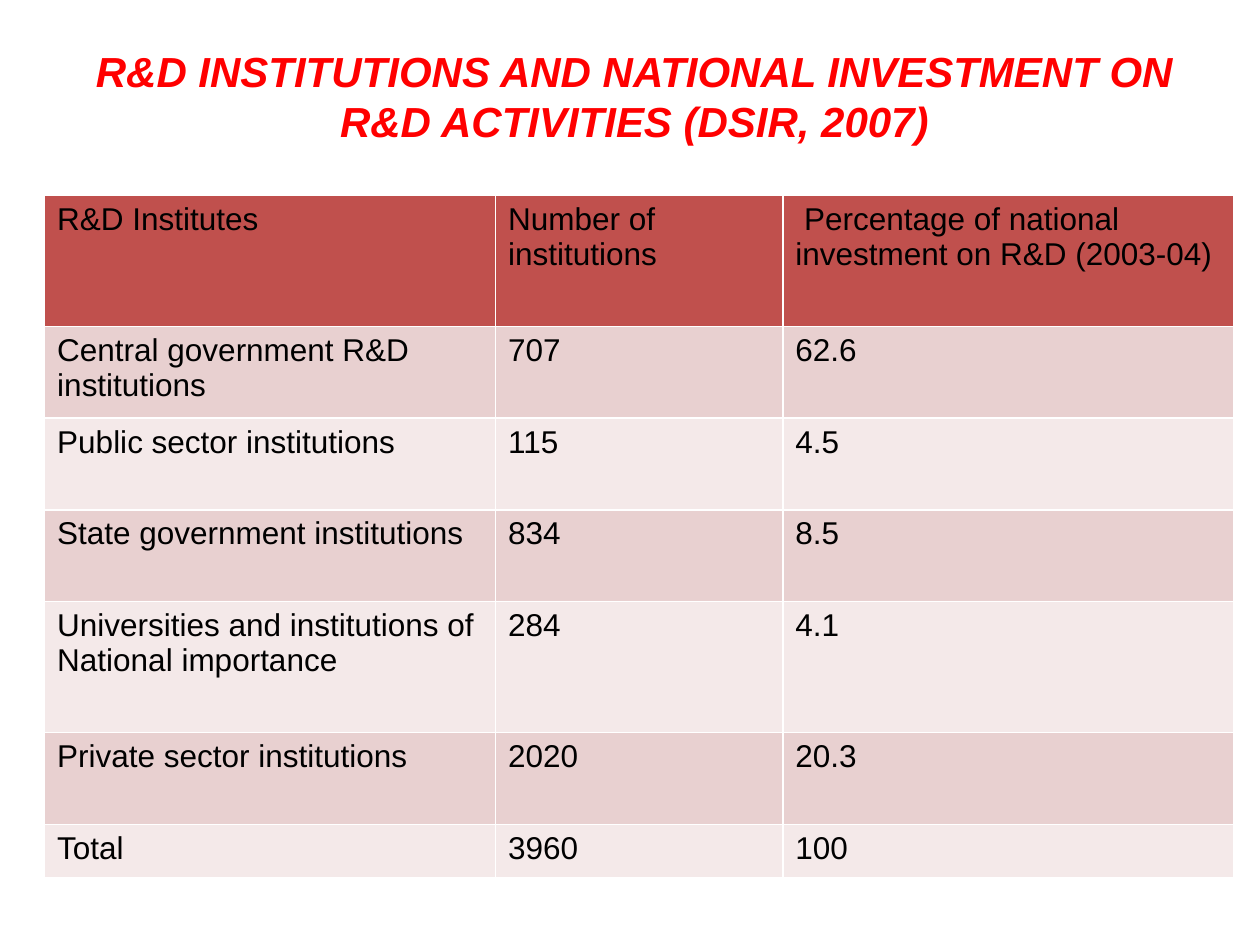
from pptx import Presentation
from pptx.dml.color import RGBColor
from pptx.enum.text import MSO_ANCHOR, PP_ALIGN
from pptx.util import Cm, Pt

TITLE = "R&D INSTITUTIONS AND NATIONAL INVESTMENT ON R&D ACTIVITIES (DSIR, 2007)"
ROWS = [
    ("R&D Institutes", "Number of institutions",
     " Percentage of national investment on R&D (2003-04)"),
    ("Central government R&D institutions", "707", "62.6"),
    ("Public sector institutions", "115", "4.5"),
    ("State government institutions", "834", "8.5"),
    ("Universities and institutions of National importance", "284", "4.1"),
    ("Private sector institutions", "2020", "20.3"),
    ("Total", "3960", "100"),
]
TALL, MEDIUM, SHORT = 2.64, 1.85, 1.07
ROW_HEIGHTS = [TALL, MEDIUM, MEDIUM, MEDIUM, TALL, MEDIUM, SHORT]
COLUMN_WIDTHS = [9.09, 5.79, 9.09]


def color(value):
    return RGBColor.from_string(value)


class SlideBuilder:
    """Holds the text and fill styles and the slide being built."""

    title_format = {"name": "Arial", "size": Pt(24), "bold": True, "italic": True}
    cell_format = {"name": "Arial", "size": Pt(18), "bold": False}
    title_color = "FF0000"
    cell_color = "000000"
    header_fill = "C0504D"
    band_fills = ("F4E9E9", "E8D0D0")

    def __init__(self, presentation):
        self.slide = presentation.slides.add_slide(presentation.slide_layouts[5])

    def format_font(self, font, values, font_color):
        for name, value in values.items():
            setattr(font, name, value)
        font.color.rgb = color(font_color)

    def add_title(self, text, left, top, width, height):
        shape = self.slide.shapes.title
        position = {"left": left, "top": top, "width": width, "height": height}
        for name, value in position.items():
            setattr(shape, name, Cm(value))
        frame = shape.text_frame
        frame.text = text
        frame.word_wrap = True
        frame.vertical_anchor = MSO_ANCHOR.MIDDLE
        paragraph = frame.paragraphs[0]
        paragraph.alignment = PP_ALIGN.CENTER
        self.format_font(paragraph.runs[0].font, self.title_format, self.title_color)

    def add_table(self, rows, left, top, widths, heights):
        table = self.slide.shapes.add_table(
            len(rows), len(widths), Cm(left), Cm(top),
            Cm(sum(widths)), Cm(sum(heights))).table
        for column, width in zip(table.columns, widths):
            column.width = Cm(width)
        for index, (row, height, texts) in enumerate(zip(table.rows, heights, rows)):
            row.height = Cm(height)
            fill = self.band_fills[index % 2] if index else self.header_fill
            for cell, text in zip(row.cells, texts):
                self.fill_cell(cell, text, fill)

    def fill_cell(self, cell, text, fill):
        cell.text = text
        cell.fill.solid()
        cell.fill.fore_color.rgb = color(fill)
        font = cell.text_frame.paragraphs[0].runs[0].font
        self.format_font(font, self.cell_format, self.cell_color)


def main():
    presentation = Presentation()
    presentation.slide_width = Cm(25.4)
    presentation.slide_height = Cm(19.05)
    builder = SlideBuilder(presentation)
    builder.add_title(TITLE, 1.09, 0.33, 23.4, 3.2)
    builder.add_table(ROWS, 0.9, 3.94, COLUMN_WIDTHS, ROW_HEIGHTS)
    presentation.save("out.pptx")


if __name__ == "__main__":
    main()
